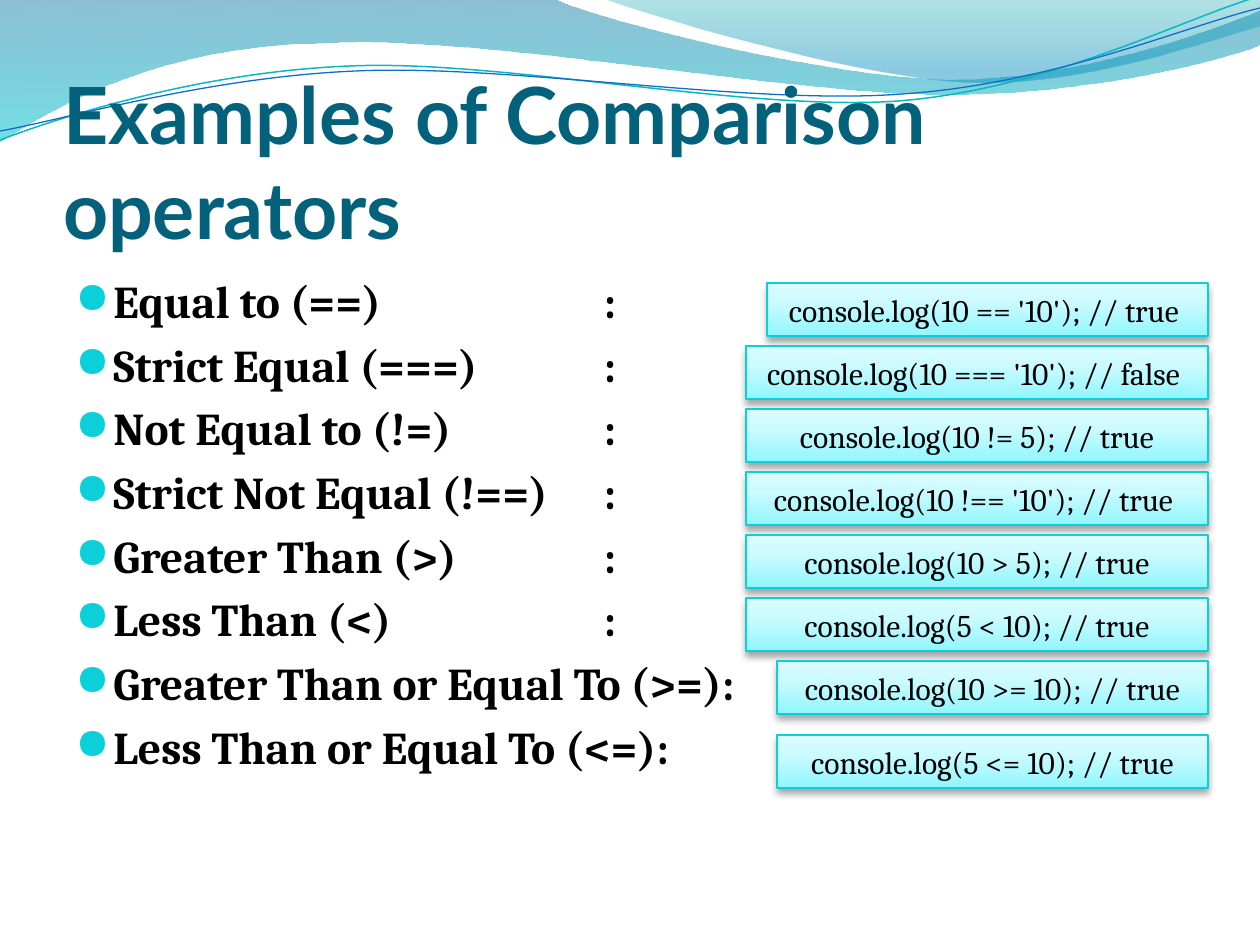
from lxml.etree import SubElement
from pptx import Presentation
from pptx.dml.color import RGBColor
from pptx.enum.shapes import MSO_SHAPE
from pptx.enum.text import MSO_ANCHOR, MSO_AUTO_SIZE, PP_ALIGN
from pptx.oxml.ns import qn
from pptx.util import Inches, Pt

PX = Inches(10) / 1260
TITLE_COLOR = RGBColor(0x04, 0x61, 0x7B)
ACCENT = RGBColor(0x0B, 0xD0, 0xD9)
TEAL_LINE = RGBColor(0x0A, 0xB8, 0xBF)
BLUE_LINE = RGBColor(0x0F, 0x6F, 0xC6)
BLACK = RGBColor(0, 0, 0)
WAVE_STOPS = [(0, RGBColor(0x00, 0x74, 0xA1), 45), (100, RGBColor(0x00, 0xC6, 0xCF), 55)]
CREST_STOPS = [(0, RGBColor(0x00, 0xA1, 0xA9), 30), (80, RGBColor(0x00, 0x8B, 0xBF), 45)]
CODE_STOPS = [
    (0, RGBColor(0x91, 0xF6, 0xFF), 100),
    (65, RGBColor(0xCC, 0xFB, 0xFF), 100),
    (100, RGBColor(0xDC, 0xFC, 0xFF), 100),
]

WAVE = [(0, 0), (554, -1),
        ((600, 21), (837, 79), (955, 79)), ((1074, 79), (1207, 33), (1260, 11)),
        (1261, 45),
        ((1239, 55), (1096, 96), (940, 94)), ((784, 94), (481, 35), (324, 43)),
        ((162, 45), (58, 105), (-1, 142))]
CREST = [(604, -1), ((641, 14), (859, 78), (969, 82)),
         ((1079, 87), (1211, 40), (1260, 26)), (1260, 0)]
TEAL_CURVE = [(0, 140), ((60, 117), (199, 72), (349, 66)),
              ((499, 59), (747, 112), (898, 101)), ((1050, 89), (1182, 19), (1257, -3))]
BLUE_CURVE = [(0, 131), ((59, 121), (207, 77), (357, 71)),
              ((508, 64), (752, 106), (903, 94)), ((1053, 84), (1186, 26), (1260, 8))]

OPERATORS = [
    "Equal to (==)\t:",
    "Strict Equal (===)\t:",
    "Not Equal to (!=)\t:",
    "Strict Not Equal (!==)\t:",
    "Greater Than (>)\t:",
    "Less Than (<)\t:",
    "Greater Than or Equal To (>=):",
    "Less Than or Equal To (<=):",
]
EXAMPLES = [
    ("console.log(10 == '10'); // true ", 21, 0),
    ("console.log(10 === '10'); // false ", 0, 63),
    ("console.log(10 != 5); // true", 0, 126),
    ("console.log(10 !== '10'); // true ", 0, 189),
    ("console.log(10 > 5); // true", 0, 252),
    ("console.log(5 < 10); // true", 0, 315),
    ("console.log(10 >= 10); // true", 31, 378),
    ("console.log(5 <= 10); // true", 31, 452),
]


def px(*lengths):
    return [round(length * PX) for length in lengths]


def add_child(parent, tag, **attributes):
    return SubElement(parent, qn(tag), {key: str(value) for key, value in attributes.items()})


def add_color(parent, color, opacity=100):
    node = add_child(parent, "a:srgbClr", val=color)
    if opacity < 100:
        add_child(node, "a:alpha", val=opacity * 1000)


def fill_gradient(shape, stops, angle):
    shape.fill.gradient()
    gradient = shape._element.spPr.find(qn("a:gradFill"))
    for child in list(gradient):
        gradient.remove(child)
    stop_list = add_child(gradient, "a:gsLst")
    for position, color, opacity in stops:
        add_color(add_child(stop_list, "a:gs", pos=position * 1000), color, opacity)
    add_child(gradient, "a:lin", ang=angle * 60000, scaled=0)


def is_curve(segment):
    return len(segment) == 3


def add_outline(page, left, top, segments, close):
    points = []
    for segment in segments:
        points.extend(segment if is_curve(segment) else [segment])
    points = [px(left + x, top + y) for x, y in points]
    builder = page.shapes.build_freeform(*points[0])
    builder.add_line_segments(points[1:], close=close)
    shape = builder.convert_to_shape()
    shape.shadow.inherit = False
    lines = iter(list(shape._element.iter(qn("a:lnTo"))))
    for segment in segments[1:]:
        line = next(lines)
        if is_curve(segment):
            line.addprevious(curve := line.makeelement(qn("a:cubicBezTo"), {}))
            for part in (line, next(lines), next(lines)):
                curve.append(part[0])
                part.getparent().remove(part)
    return shape


def add_waves(page, left, top):
    for segments, stops in ((WAVE, WAVE_STOPS), (CREST, CREST_STOPS)):
        shape = add_outline(page, left, top, segments, True)
        fill_gradient(shape, stops, 90)
        shape.line.fill.background()
    for segments, color, weight in ((TEAL_CURVE, TEAL_LINE, 0.85), (BLUE_CURVE, BLUE_LINE, 0.75)):
        shape = add_outline(page, left, top, segments, False)
        shape.fill.background()
        shape.line.color.rgb = color
        shape.line.width = Pt(weight)


def set_font(para, name, size, color, bold=False):
    para.font.name = name
    para.font.size = Pt(size)
    para.font.bold = bold
    para.font.color.rgb = color


def place_title(page, left, top, width, height):
    title = page.shapes.title
    title.left, title.top, title.width, title.height = px(left, top, width, height)
    frame = title.text_frame
    frame.text = "Examples of Comparison operators"
    frame.auto_size = MSO_AUTO_SIZE.NONE
    frame.vertical_anchor = MSO_ANCHOR.BOTTOM
    frame.margin_left = frame.margin_right = frame.margin_bottom = 0
    para = frame.paragraphs[0]
    para.alignment = PP_ALIGN.LEFT
    set_font(para, "Lato", 45, TITLE_COLOR, True)


def format_bullet(para):
    indent, colon_stop = px(38, 528)
    properties = para._p.get_or_add_pPr()
    properties.set("marL", str(indent))
    properties.set("indent", str(-indent))
    add_child(add_child(properties, "a:spcBef"), "a:spcPct", val=20000)
    add_color(add_child(properties, "a:buClr"), ACCENT)
    add_child(properties, "a:buSzPct", val=95000)
    add_child(properties, "a:buFont", typeface="OpenSymbol")
    add_child(properties, "a:buChar", char="●")
    add_child(add_child(properties, "a:tabLst"), "a:tab", pos=colon_stop, algn="l")


def add_operators(page, left, top, width, height):
    frame = page.shapes.add_textbox(*px(left, top, width, height)).text_frame
    frame.word_wrap = True
    frame.text = "\n".join(OPERATORS)
    for para in frame.paragraphs:
        format_bullet(para)
        set_font(para, "Cambria", 26, BLACK, True)


def add_examples(page, left, top, width, height):
    for code, inset, offset in EXAMPLES:
        box = page.shapes.add_shape(
            MSO_SHAPE.RECTANGLE, *px(left + inset, top + offset, width - inset, height))
        fill_gradient(box, CODE_STOPS, 270)
        box.line.color.rgb = ACCENT
        box.line.width = Pt(0.75)
        box.shadow.inherit = False
        effects = box._element.spPr.find(qn("a:effectLst"))
        shadow = add_child(effects, "a:outerShdw", blurRad=Pt(4), dist=Pt(3),
                           dir=90 * 60000, rotWithShape=0)
        add_color(shadow, BLACK, 35)
        frame = box.text_frame
        frame.word_wrap = True
        frame.vertical_anchor = MSO_ANCHOR.MIDDLE
        frame.text = code
        para = frame.paragraphs[0]
        para.alignment = PP_ALIGN.CENTER
        set_font(para, "Cambria", 18, BLACK)


def main():
    deck = Presentation()
    deck.slide_width, deck.slide_height = px(1260, 945)
    page = deck.slides.add_slide(deck.slide_layouts[5])
    add_waves(page, 0, 0)
    place_title(page, 63, 97, 1134, 158)
    title = page.shapes.title._element
    title.getparent().append(title)
    add_operators(page, 63, 267, 1134, 605)
    add_examples(page, 746, 283, 462, 53)
    deck.save("out.pptx")


if __name__ == "__main__":
    main()
